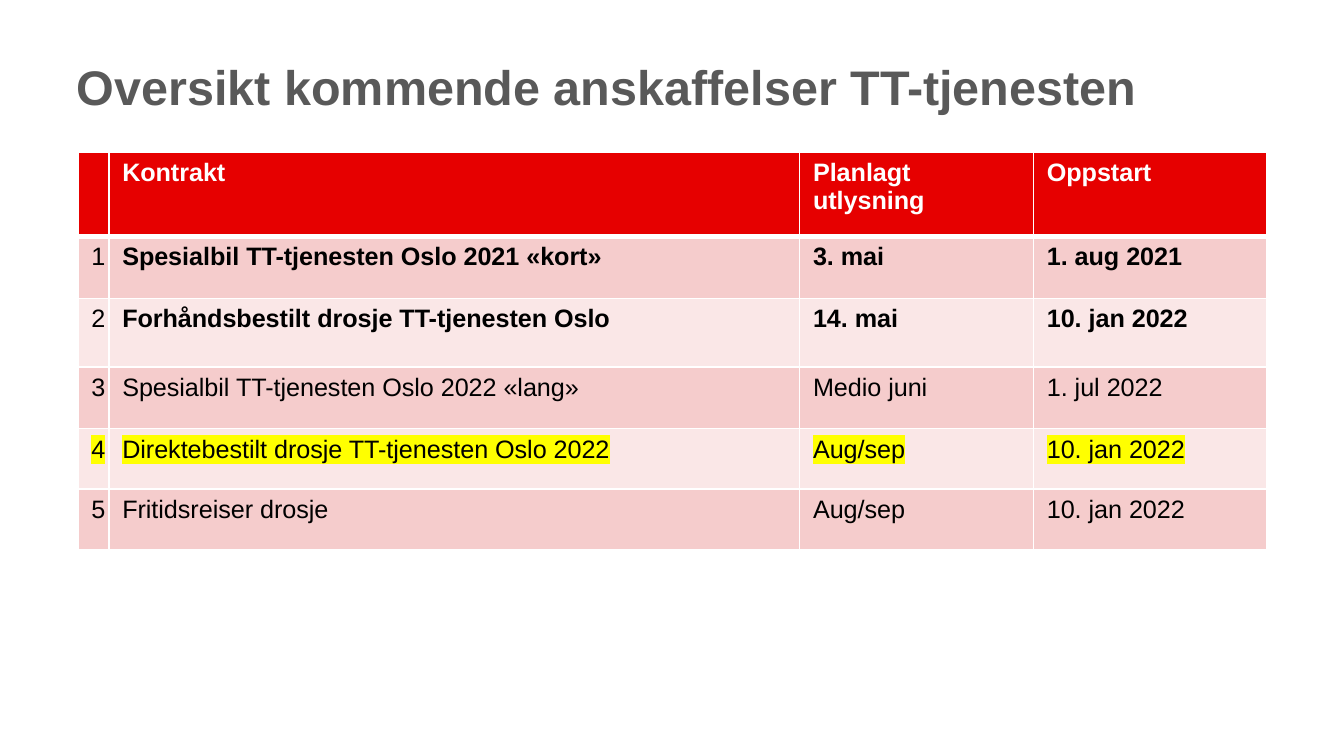
from lxml.etree import SubElement
from pptx import Presentation
from pptx.dml.color import RGBColor
from pptx.enum.text import MSO_ANCHOR, PP_ALIGN
from pptx.oxml import parse_xml
from pptx.oxml.ns import nsdecls, qn
from pptx.util import Inches, Pt


def color(code):
    return RGBColor.from_string(code)


def write(frame, text, size=13.5, ink="000000", bold=False, mark=None, font="Arial"):
    para = frame.paragraphs[0]
    para.alignment = PP_ALIGN.LEFT
    run = para.add_run()
    run.text = text
    run.font.size = Pt(size)
    run.font.bold = bold
    run.font.name = font
    run.font.color.rgb = color(ink)
    if mark:
        light = parse_xml(
            f'<a:highlight {nsdecls("a")}><a:srgbClr val="{mark}"/></a:highlight>'
        )
        run.font._element.find(qn("a:solidFill")).addnext(light)


class Deck:
    red = "E60000"
    white = "FFFFFF"
    grey = "595959"
    bands = ("F5CCCC", "FAE7E7")
    yellow = "FFFF00"

    def __init__(self, wide):
        self.show = Presentation()
        self.show.slide_width = Inches(wide)
        self.show.slide_height = Inches(wide * 9 / 16)
        self.slide = self.show.slides.add_slide(self.show.slide_layouts[5])

    def title(self, text, left, top, wide, high):
        shape = self.slide.shapes.title
        shape.left, shape.top = Inches(left), Inches(top)
        shape.width, shape.height = Inches(wide), Inches(high)
        frame = shape.text_frame
        frame.margin_left = frame.margin_right = 0
        frame.margin_top = frame.margin_bottom = 0
        frame.vertical_anchor = MSO_ANCHOR.MIDDLE
        frame.word_wrap = True
        write(frame, text, size=26, ink=self.grey, bold=True)

    def border(self, cell, side, width):
        line = SubElement(cell._tc.get_or_add_tcPr(), qn(f"a:ln{side}"), w=str(Pt(width)))
        fill = SubElement(line, qn("a:solidFill"))
        SubElement(fill, qn("a:srgbClr"), val=self.white)

    def cell(self, cell, text, fill, edges, **style):
        for side, width in zip("LRTB", edges):
            self.border(cell, side, width)
        cell.fill.solid()
        cell.fill.fore_color.rgb = color(fill)
        if text:
            write(cell.text_frame, text, **style)

    def table(self, rows, left, top, wides, highs, bold, marked):
        table = self.slide.shapes.add_table(
            len(rows), len(wides), Inches(left), Inches(top),
            Inches(sum(wides)), Inches(sum(highs)),
        ).table
        for col, wide in zip(table.columns, wides):
            col.width = Inches(wide)
        for row, high in zip(table.rows, highs):
            row.height = Inches(high)
        for r, row in enumerate(rows):
            edges = (1, 1, 3 if r == 1 else 1, 3 if r == 0 else 1)
            for c, text in enumerate(row):
                cell = table.cell(r, c)
                if c == 0:
                    cell.margin_right = Inches(0.02)
                if r == 0:
                    self.cell(cell, text, self.red, edges, ink=self.white, bold=True)
                else:
                    self.cell(
                        cell, text, self.bands[(r - 1) % 2], edges,
                        bold=r in bold and c > 0,
                        mark=self.yellow if r in marked else None,
                    )


def main():
    deck = Deck(10)
    deck.title("Oversikt kommende anskaffelser TT-tjenesten", 0.57, 0.42, 8.73, 0.44)
    plans = [
        ("Spesialbil TT-tjenesten Oslo 2021 «kort»", "3. mai", "1. aug 2021"),
        ("Forhåndsbestilt drosje TT-tjenesten Oslo", "14. mai", "10. jan 2022"),
        ("Spesialbil TT-tjenesten Oslo 2022 «lang»", "Medio juni", "1. jul 2022"),
        ("Direktebestilt drosje TT-tjenesten Oslo 2022", "Aug/sep", "10. jan 2022"),
        ("Fritidsreiser drosje", "Aug/sep", "10. jan 2022"),
    ]
    rows = [("", "Kontrakt", "Planlagt utlysning", "Oppstart")]
    rows += [(str(n), *plan) for n, plan in enumerate(plans, 1)]
    deck.table(
        rows, 0.58, 1.13, (0.23, 5.14, 1.74, 1.74),
        (0.63, 0.46, 0.51, 0.46, 0.45, 0.45), bold=(1, 2), marked=(4,),
    )
    deck.show.save("out.pptx")


if __name__ == "__main__":
    main()
